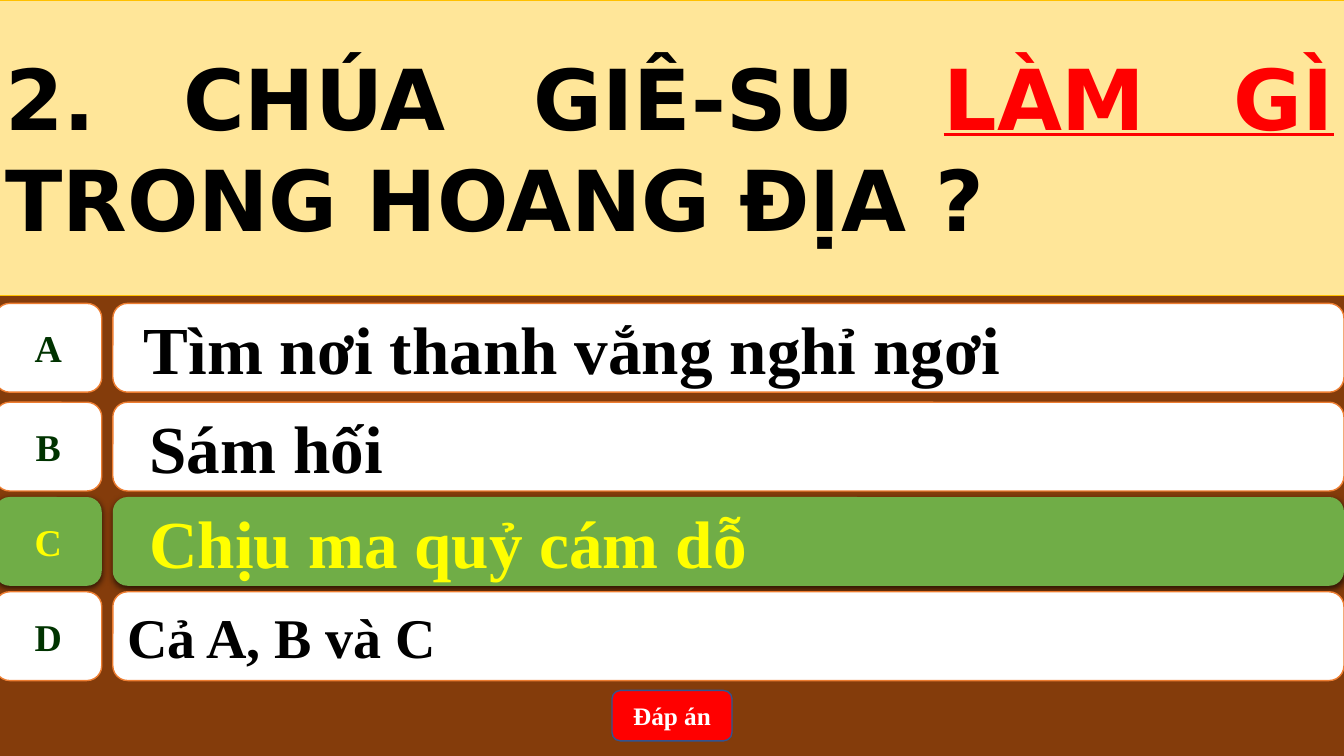
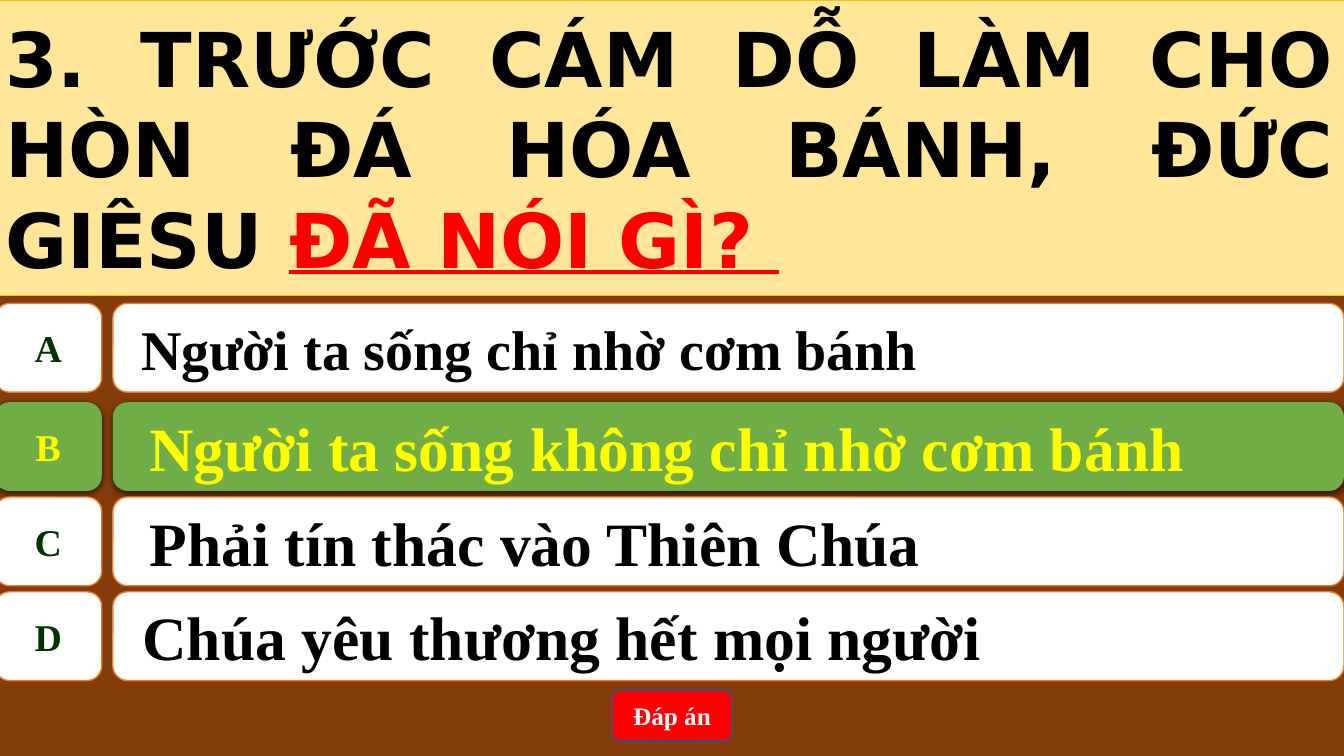
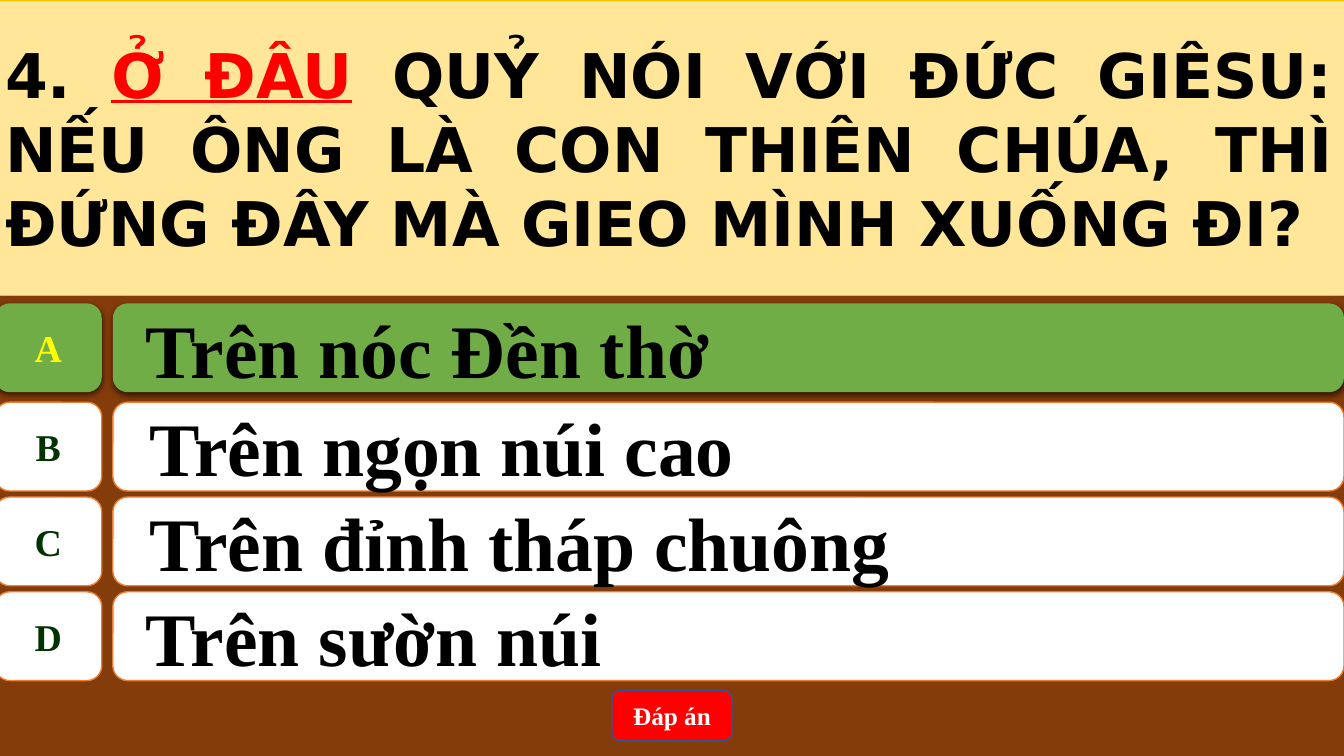
from lxml import etree
from pptx import Presentation
from pptx.dml.color import RGBColor
from pptx.enum.shapes import MSO_SHAPE as SHAPE
from pptx.enum.text import MSO_ANCHOR as ANCHOR, MSO_AUTO_SIZE as AUTO, PP_ALIGN as ALIGN
from pptx.oxml.ns import qn
from pptx.util import Pt

# Shared look
BROWN = RGBColor(0x84, 0x3C, 0x0B)
SAND = RGBColor(0xFF, 0xE6, 0x99)
GOLD = RGBColor(0xFF, 0xC0, 0x00)
ORANGE = RGBColor(0xED, 0x7D, 0x31)
GREEN = RGBColor(0x70, 0xAD, 0x47)
DARK_GREEN = RGBColor(0x00, 0x33, 0x00)
YELLOW = RGBColor(0xFF, 0xFF, 0x00)
RED = RGBColor(0xFF, 0x00, 0x00)
BLUE = RGBColor(0x32, 0x54, 0x91)
BLACK = RGBColor(0x00, 0x00, 0x00)
WHITE = RGBColor(0xFF, 0xFF, 0xFF)
SERIF, SANS = "Times New Roman", "DejaVu Sans"

# Layout, in points
SLIDE_W, SLIDE_H = 960, 540
LEFT = -3.6
QUESTION_H = 211
ROW_TOPS = (216.7, 287.3, 355, 422.7)
ROW_H = 63.4
KEY_W, KEY_GAP = 76.3, 7.9
BUTTON_W, BUTTON_H, BUTTON_TOP = 85.7, 36, 493.2

# Question runs are (text, stressed); answers are (text, size, indent)
QUIZ = [
    dict(size=60, correct="C", correct_color=YELLOW,
         question=[("2. CHÚA GIÊ-SU ", False), ("LÀM GÌ ", True),
                   ("TRONG HOANG ĐỊA ?", False)],
         answers=[("Tìm nơi thanh vắng nghỉ ngơi", 48, 12), ("Sám hối", 48, 16),
                  ("Chịu ma quỷ cám dỗ", 48, 16), ("Cả A, B và C", 40, 0)]),
    dict(size=54, correct="B", correct_color=YELLOW,
         question=[("3. TRƯỚC CÁM DỖ LÀM CHO HÒN ĐÁ HÓA BÁNH, ĐỨC GIÊSU ", False),
                   ("ĐÃ NÓI GÌ? ", True)],
         answers=[("Người ta sống chỉ nhờ cơm bánh", 40, 10),
                  ("Người ta sống không chỉ nhờ cơm bánh", 44, 16),
                  ("Phải tín thác vào Thiên Chúa", 44, 16),
                  ("Chúa yêu thương hết mọi người", 44, 11)]),
    dict(size=44, correct="A", correct_color=BLACK,
         question=[("4. ", False), ("Ở ĐÂU", True),
                   (" QUỶ NÓI VỚI ĐỨC GIÊSU: NẾU ÔNG LÀ CON THIÊN CHÚA, "
                    "THÌ ĐỨNG ĐÂY MÀ GIEO MÌNH XUỐNG ĐI?", False)],
         answers=[("Trên nóc Đền thờ", 54, 13.5), ("Trên ngọn núi cao", 54, 16),
                  ("Trên đỉnh tháp chuông", 54, 16), ("Trên sườn núi", 54, 13.5)]),
]


def add_text(p, text, size, color, font=SERIF, underline=False):
    r = p.add_run()
    r.text = text
    r.font.name, r.font.size, r.font.bold = font, Pt(size), True
    r.font.color.rgb = color
    if underline:
        r.font.underline = True


def paint(sp, fill, line=None, width=1):
    sp.fill.solid()
    sp.fill.fore_color.rgb = fill
    if line is None:
        sp.line.fill.background()
    else:
        sp.line.color.rgb = line
        sp.line.width = Pt(width)


def add_shadow(sp):
    effects = sp._element.spPr.find(qn("a:effectLst"))
    shadow = etree.SubElement(effects, qn("a:outerShdw"), blurRad=str(Pt(4.5)),
                              dist=str(Pt(1.5)), dir="5400000", rotWithShape="0")
    color = etree.SubElement(shadow, qn("a:srgbClr"), val="000000")
    etree.SubElement(color, qn("a:alpha"), val="63000")


def add_box(shapes, kind, box, fill, line, text, size, color,
            align=ALIGN.CENTER, indent=0, wrap=True):
    sp = shapes.add_shape(kind, *map(Pt, box))
    sp.shadow.inherit = False
    paint(sp, fill, line)
    tf = sp.text_frame
    tf.word_wrap = wrap
    tf.vertical_anchor = ANCHOR.MIDDLE
    p = tf.paragraphs[0]
    p.alignment = align
    if indent:
        p._p.get_or_add_pPr().set("marL", str(Pt(indent)))
    add_text(p, text, size, color)
    return sp


def add_question(s, box, runs, size):
    sp = s.shapes.title
    sp.left, sp.top, sp.width, sp.height = map(Pt, box)
    paint(sp, SAND, GOLD, 0.5)
    tf = sp.text_frame
    tf.word_wrap = True
    tf.auto_size = AUTO.NONE
    tf.vertical_anchor = ANCHOR.MIDDLE
    p = tf.paragraphs[0]
    p.alignment = ALIGN.JUSTIFY
    for text, stressed in runs:
        add_text(p, text, size, RED if stressed else BLACK, SANS, stressed)


def add_answer(s, box, key, answer, correct, correct_color):
    x, y, w, h = box
    text, size, indent = answer
    fill, line = (GREEN, None) if correct else (WHITE, ORANGE)
    row = s.shapes.add_group_shape().shapes
    label = add_box(row, SHAPE.FLOWCHART_ALTERNATE_PROCESS, (x, y, KEY_W, h), fill, line,
                    key, 27, YELLOW if correct else DARK_GREEN, wrap=False)
    offset = KEY_W + KEY_GAP
    bar = add_box(row, SHAPE.ROUNDED_RECTANGLE, (x + offset, y, w - offset, h), fill, line,
                  text, size, correct_color if correct else BLACK,
                  align=ALIGN.LEFT, indent=indent)
    if correct:
        add_shadow(label)
        add_shadow(bar)


def add_quiz_slide(prs, question, size, answers, correct, correct_color):
    s = prs.slides.add_slide(prs.slide_layouts[5])
    width = SLIDE_W - LEFT
    add_question(s, (LEFT, 0, width, QUESTION_H), question, size)
    for key, top, answer in zip("ABCD", ROW_TOPS, answers):
        add_answer(s, (LEFT, top, width, ROW_H), key, answer, key == correct, correct_color)
    # Answer button, centred
    add_box(s.shapes, SHAPE.ROUNDED_RECTANGLE,
            ((SLIDE_W - BUTTON_W) / 2, BUTTON_TOP, BUTTON_W, BUTTON_H),
            RED, BLUE, "Đáp án", 18, WHITE)


def main():
    prs = Presentation()
    prs.slide_width, prs.slide_height = Pt(SLIDE_W), Pt(SLIDE_H)
    backdrop = prs.slide_master.background.fill
    backdrop.solid()
    backdrop.fore_color.rgb = BROWN
    for quiz in QUIZ:
        add_quiz_slide(prs, **quiz)
    prs.save("out.pptx")


if __name__ == "__main__":
    main()
